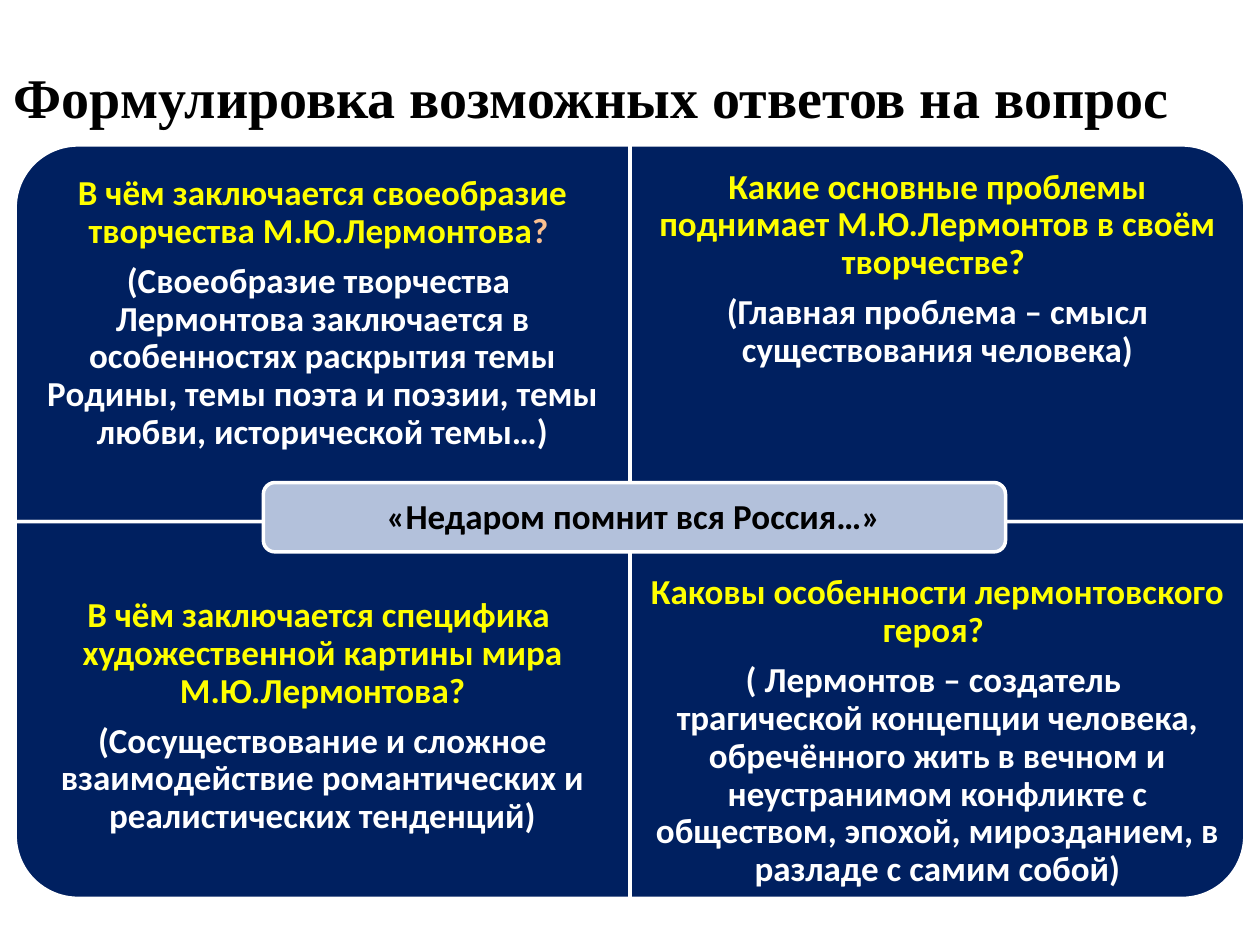
from pptx import Presentation
from pptx.dml.color import RGBColor
from pptx.enum.shapes import MSO_SHAPE
from pptx.enum.text import MSO_ANCHOR, PP_ALIGN
from pptx.util import Inches, Pt

NAVY = RGBColor(0x00, 0x20, 0x60)
PALE_BLUE = RGBColor(0xB3, 0xC1, 0xDB)
YELLOW = RGBColor(0xFF, 0xFF, 0x00)
PEACH = RGBColor(0xFA, 0xC0, 0x90)
WHITE = RGBColor(0xFF, 0xFF, 0xFF)
BLACK = RGBColor(0x00, 0x00, 0x00)

LEFT, TOP = 0.12, 1.15
CELL_W, CELL_H = 4.88, 2.99

# column, row, rotation, text top, side inset, question runs, answer
QUADRANTS = [
    (0, 0, 270, 1.39, 0.16,
     [("В чём заключается своеобразие творчества М.Ю.Лермонтова", YELLOW),
      ("? ", PEACH)],
     "(Своеобразие творчества  Лермонтова заключается в особенностях "
     "раскрытия темы Родины, темы поэта и поэзии, темы любви, "
     "исторической темы…)"),
    (1, 0, 0, 1.34, 0.09,
     [("Какие основные проблемы поднимает М.Ю.Лермонтов в своём "
       "творчестве? ", YELLOW)],
     "(Главная проблема – смысл существования человека)"),
    (0, 1, 180, 4.74, 0.16,
     [("В чём заключается специфика  художественной картины мира "
       "М.Ю.Лермонтова?", YELLOW)],
     "(Сосуществование и сложное взаимодействие романтических и "
     "реалистических тенденций)"),
    (1, 1, 90, 4.56, 0.16,
     [("Каковы особенности лермонтовского героя? ", YELLOW)],
     "( Лермонтов – создатель  трагической концепции человека, "
     "обречённого жить в вечном и неустранимом конфликте с обществом, "
     "эпохой, мирозданием, в разладе с самим собой)"),
]


def add_run(p, text, *, color, font="Calibri", size=20, bold=True):
    r = p.add_run()
    r.text = text
    r.font.name = font
    r.font.size = Pt(size)
    r.font.bold = bold
    r.font.color.rgb = color


class SlideBuilder:
    def __init__(self, slide):
        self.s = slide

    def title(self, text, x, y, w, h):
        sp = self.s.shapes.title
        sp.left, sp.top, sp.width, sp.height = map(Inches, (x, y, w, h))
        tf = sp.text_frame
        tf.vertical_anchor = MSO_ANCHOR.MIDDLE
        p = tf.paragraphs[0]
        p.alignment = PP_ALIGN.CENTER
        add_run(p, text, color=BLACK, font="Times New Roman", size=32)

    def panel(self, kind, x, y, w, h, fill, rotation=0):
        """Draw a white-edged panel; x, y, w, h describe it as seen after rotation."""
        if rotation % 180:
            x, y, w, h = x + (w - h) / 2, y + (h - w) / 2, h, w
        sp = self.s.shapes.add_shape(kind, *map(Inches, (x, y, w, h)))
        sp.rotation = rotation
        sp.shadow.inherit = False
        sp.fill.solid()
        sp.fill.fore_color.rgb = fill
        sp.line.color.rgb = WHITE
        sp.line.width = Pt(2)

    def text(self, paragraphs, x, y, w, h, *, inset, anchor=MSO_ANCHOR.TOP):
        """Write paragraphs, each a list of (text, colour) runs."""
        tf = self.s.shapes.add_textbox(*map(Inches, (x, y, w, h))).text_frame
        tf.word_wrap = True
        tf.vertical_anchor = anchor
        tf.margin_left = tf.margin_right = Inches(inset)
        tf.margin_top = tf.margin_bottom = 0
        for i, runs in enumerate(paragraphs):
            p = tf.add_paragraph() if i else tf.paragraphs[0]
            p.alignment = PP_ALIGN.CENTER
            p.line_spacing = 0.9
            p.space_after = Pt(7)
            for text, color in runs:
                add_run(p, text, color=color)


def main():
    prs = Presentation()
    prs.slide_width, prs.slide_height = Inches(10), Inches(7.5)
    b = SlideBuilder(prs.slides.add_slide(prs.slide_layouts[5]))
    b.title("Формулировка возможных ответов на вопрос ", 0, 0.29, 9.5, 0.94)

    for col, row, rotation, text_top, inset, question, answer in QUADRANTS:
        x, y = LEFT + col * CELL_W, TOP + row * CELL_H
        b.panel(MSO_SHAPE.ROUND_1_RECTANGLE, x, y, CELL_W, CELL_H, NAVY, rotation)
        b.text([question, [(answer, WHITE)]], x, text_top, CELL_W,
               y + CELL_H - text_top, inset=inset)

    b.panel(MSO_SHAPE.ROUNDED_RECTANGLE, 2.09, 3.83, 5.89, 0.55, PALE_BLUE)
    b.text([[("«Недаром помнит вся Россия…»", BLACK)]], 2.11, 3.86, 5.84, 0.5,
           inset=0.08, anchor=MSO_ANCHOR.MIDDLE)
    prs.save("out.pptx")


if __name__ == "__main__":
    main()
